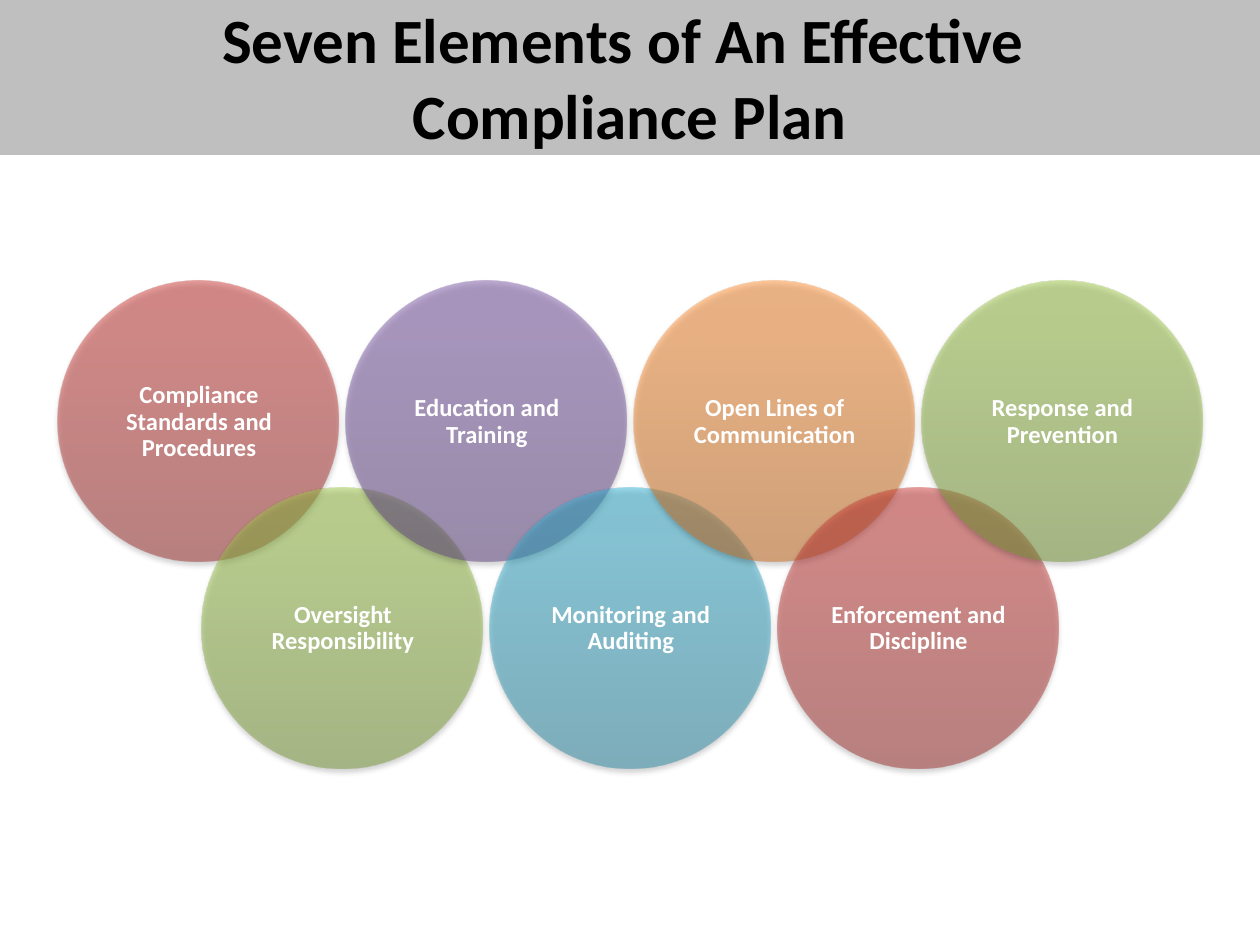
from lxml import etree
from pptx import Presentation
from pptx.dml.color import RGBColor
from pptx.enum.shapes import MSO_SHAPE as SHAPE
from pptx.enum.text import MSO_ANCHOR as ANCHOR, PP_ALIGN as ALIGN
from pptx.oxml import parse_xml
from pptx.oxml.ns import nsdecls, qn
from pptx.util import Inches, Pt

FONT = "Calibri"
DIAMETER = 2.23
LEFT, STEP = 0.46, 1.142
ROW_TOPS = (2.23, 3.87)
TEXT_INSET, TEXT_SIZE = 0.33, 1.58

# Gradient colours from bottom to top
RED = ("9C2F2D", "CB3E3A", "CE3B37")
GREEN = ("779737", "9BC348", "9DC746")
PURPLE = ("5F4480", "7B58A6", "7C57A8")
BLUE = ("2A88A2", "37B1D2", "34B4D6")
ORANGE = ("CC6E20", "FF9034", "FF9136")

ELEMENTS = [
    ("Compliance Standards and Procedures", RED),
    ("Oversight Responsibility", GREEN),
    ("Education and Training", PURPLE),
    ("Monitoring and Auditing", BLUE),
    ("Open Lines of Communication", ORANGE),
    ("Enforcement and Discipline", RED),
    ("Response and Prevention", GREEN),
]


def rgb(value):
    return RGBColor.from_string(value)


def write_text(sp, text, size, color, margin=None, line_spacing=None):
    """Fill a shape with one centred bold paragraph."""
    tf = sp.text_frame
    tf.word_wrap = True
    tf.vertical_anchor = ANCHOR.MIDDLE
    if margin is not None:
        tf.margin_left = tf.margin_right = Inches(margin)
        tf.margin_top = tf.margin_bottom = Inches(margin)
    p = tf.paragraphs[0]
    p.text = text
    p.alignment = ALIGN.CENTER
    if line_spacing:
        p.line_spacing = line_spacing
    for r in p.runs:
        r.font.name = FONT
        r.font.size = Pt(size)
        r.font.bold = True
        r.font.color.rgb = rgb(color)


def add_plain_shape(s, kind, left, top, width, height):
    sp = s.shapes.add_shape(kind, Inches(left), Inches(top), Inches(width), Inches(height))
    sp.shadow.inherit = False
    sp.line.fill.background()
    return sp


def set_glass_fill(sp, colors):
    """Half-transparent vertical gradient with a soft shadow below."""
    stops = "".join(
        f'<a:gs pos="{pos}000"><a:srgbClr val="{color}"><a:alpha val="50000"/></a:srgbClr></a:gs>'
        for pos, color in zip((0, 80, 100), colors)
    )
    sp_pr = sp._element.spPr
    sp_pr.find(qn("a:ln")).addprevious(parse_xml(
        f'<a:gradFill {nsdecls("a")} rotWithShape="1"><a:gsLst>{stops}</a:gsLst>'
        '<a:lin ang="16200000" scaled="0"/></a:gradFill>'
    ))
    shadow = etree.SubElement(
        sp_pr.find(qn("a:effectLst")), qn("a:outerShdw"),
        blurRad=str(Pt(3.1)), dist=str(Pt(1.8)), dir="5400000", rotWithShape="0",
    )
    color = etree.SubElement(shadow, qn("a:srgbClr"), val="000000")
    etree.SubElement(color, qn("a:alpha"), val="35000")


def add_title(s, text):
    sp = add_plain_shape(s, SHAPE.RECTANGLE, 0, -0.02, 10, 1.25)
    sp.fill.solid()
    sp.fill.fore_color.rgb = rgb("BFBFBF")
    write_text(sp, text, size=36, color="000000")


def add_circle(s, left, top, text, colors):
    set_glass_fill(add_plain_shape(s, SHAPE.OVAL, left, top, DIAMETER, DIAMETER), colors)
    label = s.shapes.add_textbox(
        Inches(left + TEXT_INSET), Inches(top + TEXT_INSET), Inches(TEXT_SIZE), Inches(TEXT_SIZE)
    )
    write_text(label, text, size=14, color="FFFFFF", margin=0.06, line_spacing=0.9)


def main():
    prs = Presentation()
    prs.slide_width, prs.slide_height = Inches(10), Inches(7.5)
    s = prs.slides.add_slide(prs.slide_layouts[6])
    add_title(s, "Seven Elements of An Effective \vCompliance Plan")
    for i, (text, colors) in enumerate(ELEMENTS):
        add_circle(s, LEFT + i * STEP, ROW_TOPS[i % 2], text, colors)
    prs.save("out.pptx")


if __name__ == "__main__":
    main()
